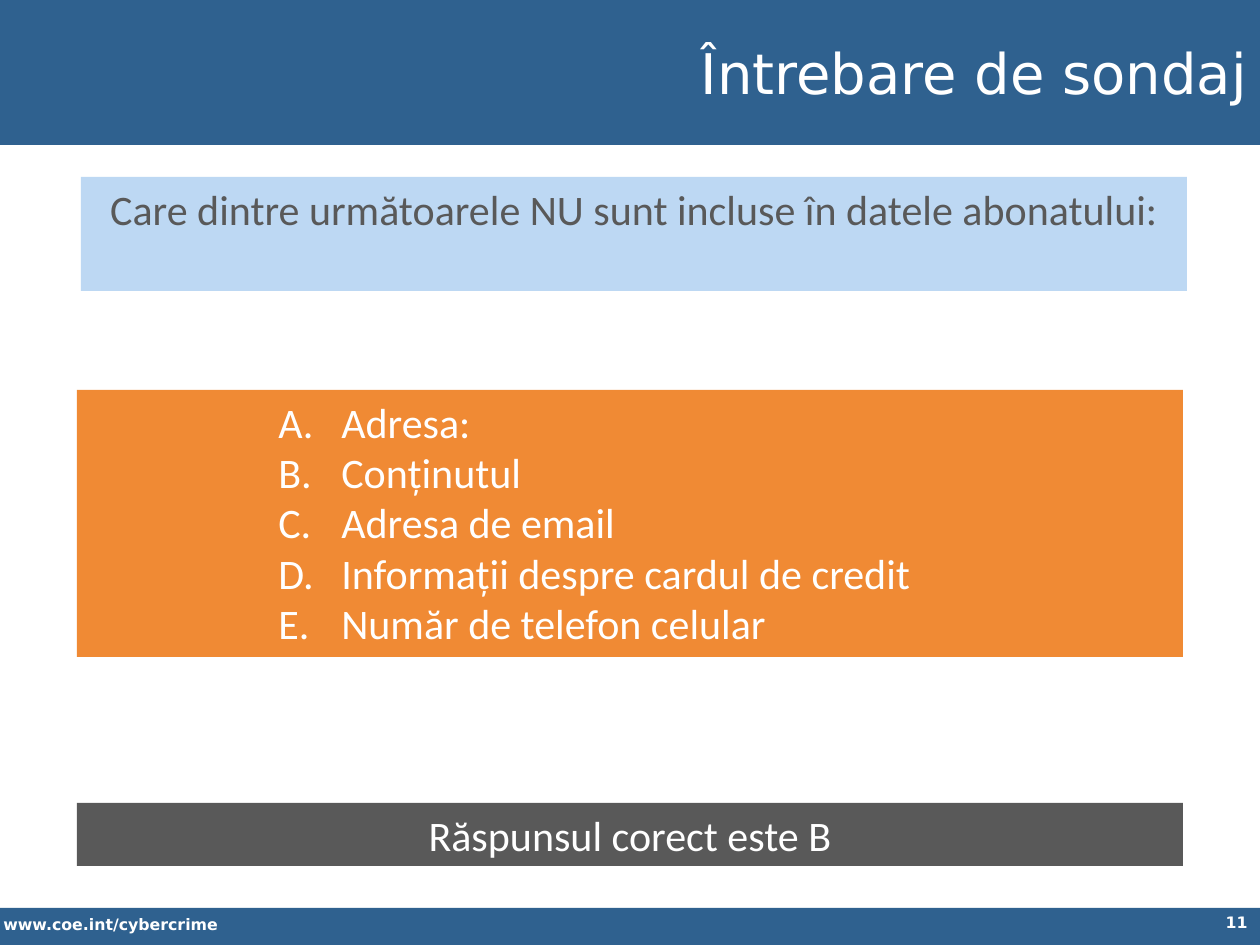
import pptx
import pptx.util
import pptx.dml.color
import pptx.enum.shapes
import pptx.enum.text
import pptx.oxml.ns
from lxml import etree

RGB = pptx.dml.color.RGBColor
BLUE = RGB(0x2F, 0x61, 0x8F)
PALE_BLUE = RGB(0xBD, 0xD8, 0xF3)
ORANGE = RGB(0xF0, 0x8A, 0x34)
GREY = RGB(0x59, 0x59, 0x59)
WHITE = RGB(0xFF, 0xFF, 0xFF)

ALIGN = pptx.enum.text.PP_ALIGN
ANCHOR = pptx.enum.text.MSO_ANCHOR
HEAD_FONT, BODY_FONT = "DejaVu Sans", "Calibri"

# Content
TITLE = "Întrebare de sondaj"
QUESTION = "Care dintre următoarele NU sunt incluse în datele abonatului:"
OPTIONS = [
    "Adresa:",
    "Conținutul",
    "Adresa de email",
    "Informații despre cardul de credit",
    "Număr de telefon celular",
]
ANSWER = "Răspunsul corect este B"
SITE = "www.coe.int/cybercrime"
PAGE = "11"

# Layout in px, 126 to the inch
EMU_PER_PX = 914400 / 126
SLIDE_W, SLIDE_H = 1260, 945
BOX_X, BOX_W = 77, 1106
OPTION_INDENT, OPTION_HANG = 252, 63


def px(n):
    return pptx.util.Emu(round(n * EMU_PER_PX))


def add_rect(slide, box, color):
    sp = slide.shapes.add_shape(
        pptx.enum.shapes.MSO_SHAPE.RECTANGLE, *map(px, box))
    sp.shadow.inherit = False
    sp.fill.solid()
    sp.fill.fore_color.rgb = color
    sp.line.fill.background()
    return sp


def add_text(sp, lines, size, color, align, font=BODY_FONT, bold=False,
             anchor=ANCHOR.TOP, lettered=False):
    tf = sp.text_frame
    tf.word_wrap = True
    tf.vertical_anchor = anchor
    for i, line in enumerate(lines):
        p = tf.add_paragraph() if i else tf.paragraphs[0]
        p.alignment = align
        if lettered:
            add_letter(p)
        r = p.add_run()
        r.text = line
        r.font.name = font
        r.font.size = pptx.util.Pt(size)
        r.font.bold = bold
        r.font.color.rgb = color


def add_letter(p):
    """Number the paragraph A., B., C. with a hanging indent."""
    p.level = 3
    pPr = p._p.get_or_add_pPr()
    pPr.set("marL", str(px(OPTION_INDENT)))
    pPr.set("indent", str(-px(OPTION_HANG)))
    bullet = etree.SubElement(pPr, pptx.oxml.ns.qn("a:buAutoNum"))
    bullet.set("type", "alphaUcPeriod")


def main():
    prs = pptx.Presentation()
    prs.slide_width, prs.slide_height = px(SLIDE_W), px(SLIDE_H)
    slide = prs.slides.add_slide(prs.slide_layouts[6])

    # Header and footer bands
    add_rect(slide, (0, 0, SLIDE_W, 145), BLUE)
    add_rect(slide, (0, 908, SLIDE_W, 37), BLUE)

    # Footer texts
    for text, box, align in [
        (SITE, (-9, 909, 444, 32), ALIGN.LEFT),
        (PAGE, (977, 907, 283, 38), ALIGN.RIGHT),
    ]:
        sp = slide.shapes.add_textbox(*map(px, box))
        add_text(sp, [text], 9, WHITE, align, HEAD_FONT, bold=True)

    # Question, answer and lettered options
    sp = add_rect(slide, (BOX_X + 4, 177, BOX_W, 114), PALE_BLUE)
    add_text(sp, [QUESTION], 24, GREY, ALIGN.CENTER)
    sp = add_rect(slide, (BOX_X, 803, BOX_W, 63), GREY)
    add_text(sp, [ANSWER], 24, WHITE, ALIGN.CENTER)
    sp = add_rect(slide, (BOX_X, 390, BOX_W, 267), ORANGE)
    add_text(sp, OPTIONS, 24, WHITE, ALIGN.LEFT, lettered=True)

    # Title
    sp = add_rect(slide, (277, 9, 983, 127), BLUE)
    add_text(sp, [TITLE], 32, WHITE, ALIGN.RIGHT, HEAD_FONT,
             anchor=ANCHOR.MIDDLE)

    prs.save("out.pptx")


if __name__ == "__main__":
    main()
